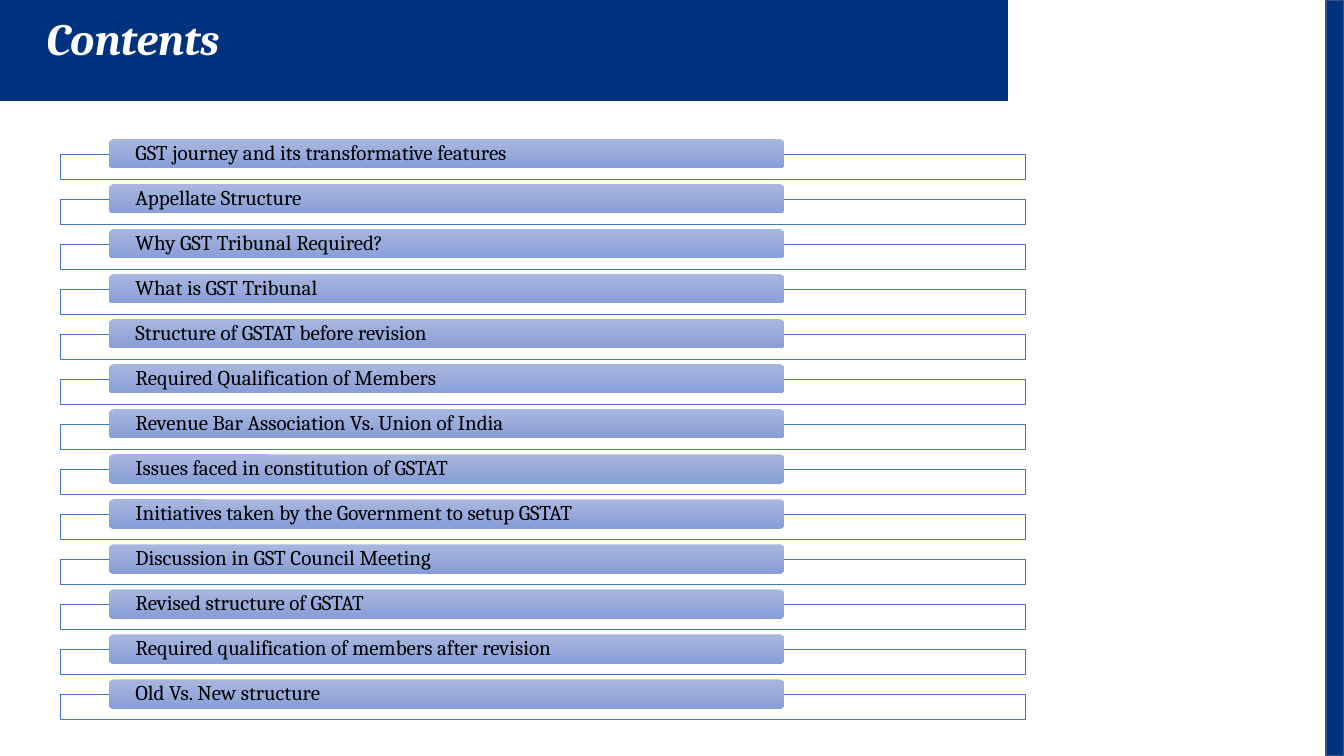
from dataclasses import dataclass

from pptx import Presentation
from pptx.dml.color import RGBColor as Color
from pptx.enum.shapes import MSO_SHAPE as Preset
from pptx.enum.text import MSO_ANCHOR as Anchor, MSO_AUTO_SIZE as AutoSize, PP_ALIGN as Align
from pptx.util import Inches, Pt


@dataclass(frozen=True)
class Theme:
    font: str = "Cambria"
    title_size: int = 32
    topic_size: int = 15
    navy: Color = Color.from_string("00327D")
    navy_edge: Color = Color.from_string("325491")
    blue: Color = Color.from_string("4472C4")
    bar_top: Color = Color.from_string("A8B7DF")
    bar_bottom: Color = Color.from_string("889ED7")
    white: Color = Color.from_string("FFFFFF")
    black: Color = Color.from_string("000000")


theme = Theme()


def write(shape, text, size, color, inset=0.1, pad=0.0, anchor=Anchor.MIDDLE, bold=False, italic=False):
    frame = shape.text_frame
    frame.word_wrap = True
    frame.auto_size = AutoSize.NONE
    frame.vertical_anchor = anchor
    frame.margin_left = frame.margin_right = Inches(inset)
    frame.margin_top = frame.margin_bottom = Inches(pad)
    para = frame.paragraphs[0]
    para.alignment = Align.LEFT
    para.line_spacing = 0.9
    span = para.add_run()
    span.text = text
    span.font.name = theme.font
    span.font.size = Pt(size)
    span.font.color.rgb = color
    span.font.bold = bold
    span.font.italic = italic


def add_preset(preset, left, top, width, height):
    shape = slide.shapes.add_shape(preset, Inches(left), Inches(top), Inches(width), Inches(height))
    shape.shadow.inherit = False
    return shape


deck = Presentation()
deck.slide_width = Inches(13.33)
deck.slide_height = Inches(7.5)
slide = deck.slides.add_slide(deck.slide_layouts.get_by_name("Title Only"))

# Banner and title
outline = slide.shapes.build_freeform(0, 0, scale=Inches(1))
outline.add_line_segments([(0, 1.05), (9.82, 1.05), (10.09, 0)], close=True)
banner = outline.convert_to_shape()
banner.shadow.inherit = False
banner.fill.solid()
banner.fill.fore_color.rgb = theme.navy
banner.line.fill.background()

title = slide.shapes.title
title.left, title.top, title.width, title.height = Inches(0.36), Inches(0.12), Inches(9.19), Inches(0.64)
write(title, "Contents", theme.title_size, theme.white,
      pad=0.05, anchor=Anchor.TOP, bold=True, italic=True)
title.element.addprevious(banner.element)  # keeps the banner behind the title

# Strip along the right edge
strip = add_preset(Preset.RECTANGLE, 13.15, 0, 0.18, 7.5)
strip.fill.solid()
strip.fill.fore_color.rgb = theme.navy
strip.line.color.rgb = theme.navy_edge
strip.line.width = Pt(1)

# Topics: a bar on top of an outlined frame, at an equal pitch
topics = [
    "GST journey and its transformative features",
    "Appellate Structure",
    "Why GST Tribunal Required?",
    "What is GST Tribunal",
    "Structure of GSTAT before revision",
    "Required Qualification of Members",
    "Revenue Bar Association Vs. Union of India",
    "Issues faced in constitution of GSTAT",
    "Initiatives taken by the Government to setup GSTAT",
    "Discussion in GST Council Meeting",
    "Revised structure of GSTAT",
    "Required qualification of members after revision",
    "Old Vs. New structure",
]
first_top, last_top = 1.38, 6.74
pitch = (last_top - first_top) / (len(topics) - 1)

for index, topic in enumerate(topics):
    top = first_top + index * pitch

    topic_frame = add_preset(Preset.RECTANGLE, 0.6, top + 0.15, 9.57, 0.25)
    topic_frame.fill.solid()
    topic_frame.fill.fore_color.rgb = theme.white
    topic_frame.line.color.rgb = theme.blue
    topic_frame.line.width = Pt(0.5)

    bar = add_preset(Preset.ROUNDED_RECTANGLE, 1.08, top, 6.7, 0.29)
    bar.fill.gradient()
    bar.fill.gradient_angle = 270
    for stop, color in zip(bar.fill.gradient_stops, (theme.bar_top, theme.bar_bottom)):
        stop.color.rgb = color
    bar.line.fill.background()
    write(bar, topic, theme.topic_size, theme.black, inset=0.25)

deck.save("out.pptx")
